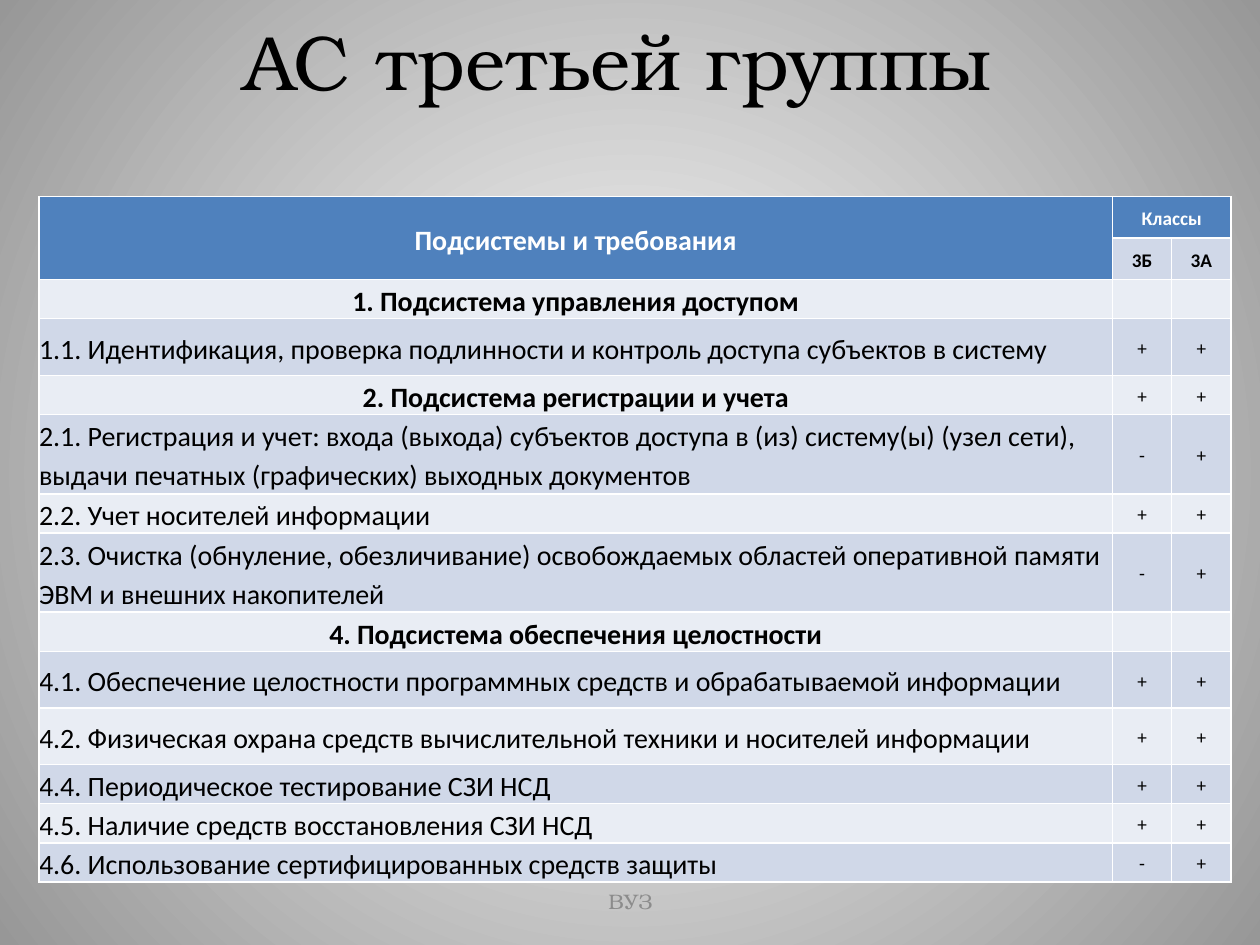
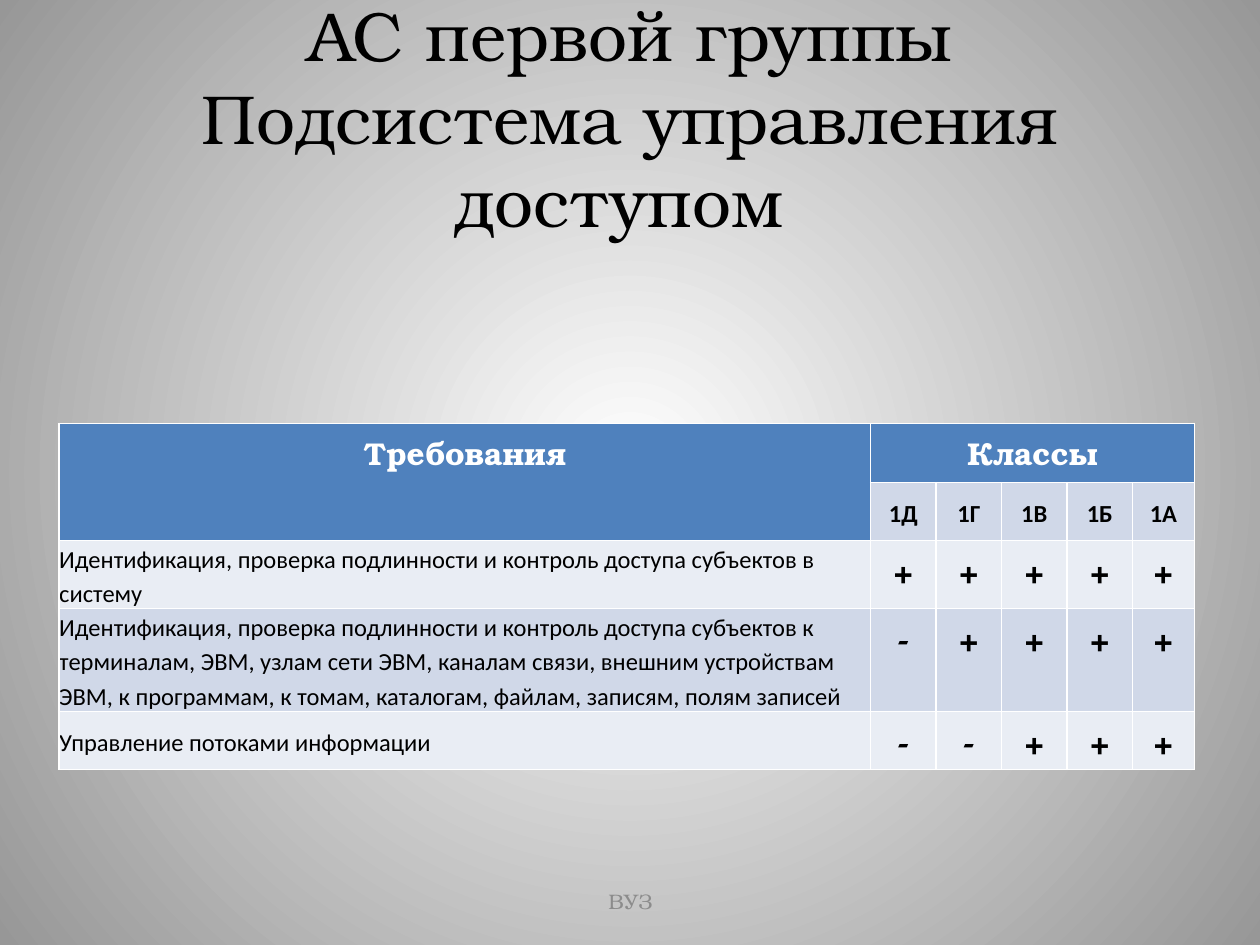
from dataclasses import dataclass, replace

from lxml import etree
from pptx import Presentation
from pptx import util as u
from pptx.dml import color
from pptx.enum import text
from pptx.oxml import ns

CENTER, LEFT = text.PP_ALIGN.CENTER, text.PP_ALIGN.LEFT
MIDDLE, TOP = text.MSO_ANCHOR.MIDDLE, text.MSO_ANCHOR.TOP
FOOTER = "ВУЗ"


@dataclass(frozen=True)
class Theme:
    serif: str = "TeX Gyre Bonum"
    sans: str = "Calibri"
    ink: str = "000000"
    white: str = "FFFFFF"
    edge: str = "979797"
    muted: str = "8C8C8C"
    header: str = "4F81BD"
    dark_band: str = "D0D8E8"
    light_band: str = "E9EDF4"
    footer_size: float = 12
    border: float = 1


THEME = Theme()


@dataclass(frozen=True)
class CellStyle:
    """Type and placement of the text in a table cell."""
    size: float
    font: str = THEME.sans
    color: str = THEME.ink
    bold: bool = False
    align: int = CENTER
    tight: bool = True  # no margins, centred vertically, 1.15 lines


class Deck:
    def __init__(self, theme):
        self.theme = theme
        self.presentation = Presentation()
        self.presentation.slide_width = u.Inches(10)
        self.presentation.slide_height = u.Inches(7.5)
        self.slide = None
        self.paint_background()

    def paint_background(self):
        """Put a round gradient behind every slide."""
        master = self.presentation.slide_master
        fill = master.background.fill
        fill.gradient()
        stops = zip(fill.gradient_stops, (self.theme.white, self.theme.edge), (0, 1))
        for stop, shade, position in stops:
            stop.color.rgb = color.RGBColor.from_string(shade)
            stop.position = position
        linear = next(master.element.iter(ns.qn("a:lin")))
        circle = etree.Element(ns.qn("a:path"), path="circle")
        etree.SubElement(circle, ns.qn("a:fillToRect"),
                         dict.fromkeys("ltrb", "50000"))
        linear.getparent().replace(linear, circle)

    def format_text(self, frame, font, size, shade, bold=False, align=CENTER):
        for paragraph in frame.paragraphs:
            paragraph.alignment = align
            for run in paragraph.runs:
                run.font.name = font
                run.font.size = u.Pt(size)
                run.font.bold = bold
                run.font.color.rgb = color.RGBColor.from_string(shade)

    def add_slide(self, title, top, height, size):
        layout = self.presentation.slide_layouts[5]
        self.slide = self.presentation.slides.add_slide(layout)
        shape = self.slide.shapes.title
        shape.left, shape.top = u.Inches(0.5), u.Inches(top)
        shape.width, shape.height = u.Inches(9), u.Inches(height)
        frame = shape.text_frame
        frame.text = title
        frame.auto_size = text.MSO_AUTO_SIZE.NONE
        frame.vertical_anchor = MIDDLE
        self.format_text(frame, self.theme.serif, size, self.theme.ink)
        self.add_footer()

    def add_footer(self):
        box = self.slide.shapes.add_textbox(
            u.Inches(3.42), u.Inches(6.95), u.Inches(3.17), u.Inches(0.4))
        frame = box.text_frame
        frame.word_wrap = True
        frame.text = FOOTER
        frame.vertical_anchor = MIDDLE
        self.format_text(frame, self.theme.serif, self.theme.footer_size,
                         self.theme.muted)

    def add_table(self, left, top, widths, heights):
        """Add an empty banded table whose header spans two rows."""
        shape = self.slide.shapes.add_table(
            len(heights), len(widths), u.Inches(left), u.Inches(top),
            u.Inches(sum(widths)), u.Inches(sum(heights)))
        table = shape.table
        table.first_row = table.horz_banding = False
        for column, width in zip(table.columns, widths):
            column.width = u.Inches(width)
        for row, height in zip(table.rows, heights):
            row.height = u.Inches(height)
        table.cell(0, 0).merge(table.cell(1, 0))
        table.cell(0, 1).merge(table.cell(0, len(widths) - 1))

        bands = (self.theme.light_band, self.theme.dark_band)
        for index, row in enumerate(table.rows):
            for cell in row.cells:
                cell.margin_left = cell.margin_right = 0
                cell.margin_top = cell.margin_bottom = 0
                self.add_borders(cell)
                cell.fill.solid()
                shade = self.theme.header if index == 0 else bands[index % 2]
                cell.fill.fore_color.rgb = color.RGBColor.from_string(shade)
        return table

    def add_borders(self, cell):
        properties = cell._tc.get_or_add_tcPr()
        for side in ("lnL", "lnR", "lnT", "lnB"):
            line = etree.SubElement(properties, ns.qn(f"a:{side}"),
                                    w=str(u.Pt(self.theme.border)))
            fill = etree.SubElement(line, ns.qn("a:solidFill"))
            etree.SubElement(fill, ns.qn("a:srgbClr"), val=self.theme.white)

    def write_cell(self, cell, words, style):
        cell.text_frame.text = words
        cell.vertical_anchor = MIDDLE if style.tight else TOP
        if style.tight:
            cell.text_frame.paragraphs[0].line_spacing = 1.15
        else:
            cell.margin_left = cell.margin_right = u.Inches(0.1)
            cell.margin_top = cell.margin_bottom = u.Inches(0.05)
        self.format_text(cell.text_frame, style.font, style.size, style.color,
                         style.bold, style.align)

    def write_header(self, table, heading, heading_style, group_style,
                     classes, class_style):
        self.write_cell(table.cell(0, 0), heading, heading_style)
        self.write_cell(table.cell(0, 1), "Классы", group_style)
        for column, name in enumerate(classes, 1):
            self.write_cell(table.cell(1, column), name, class_style)

    def write_requirement(self, table, row, words, marks, style, mark_style):
        self.write_cell(table.cell(row, 0), words, style)
        for column, mark in enumerate(marks, 1):
            self.write_cell(table.cell(row, column), mark, mark_style)


# Requirement, marks per class, row height
THIRD_GROUP = [
    ("1. Подсистема управления доступом", "", 0.31),
    ("1.1. Идентификация, проверка подлинности и контроль доступа субъектов "
     "в систему", "++", 0.45),
    ("2. Подсистема регистрации и учета", "++", 0.31),
    ("2.1. Регистрация и учет: входа (выхода) субъектов доступа в (из) "
     "систему(ы) (узел сети), выдачи печатных (графических) выходных "
     "документов", "-+", 0.63),
    ("2.2. Учет носителей информации", "++", 0.31),
    ("2.3. Очистка (обнуление, обезличивание) освобождаемых областей "
     "оперативной памяти ЭВМ и внешних накопителей", "-+", 0.63),
    ("4. Подсистема обеспечения целостности", "", 0.31),
    ("4.1. Обеспечение целостности программных средств и обрабатываемой "
     "информации", "++", 0.45),
    ("4.2. Физическая охрана средств вычислительной техники и носителей "
     "информации", "++", 0.45),
    ("4.4. Периодическое тестирование СЗИ НСД", "++", 0.31),
    ("4.5. Наличие средств восстановления СЗИ НСД", "++", 0.31),
    ("4.6. Использование сертифицированных средств защиты", "-+", 0.31),
]

FIRST_GROUP = [
    ("Идентификация, проверка подлинности и контроль доступа субъектов "
     "в систему", "+++++", 0.54),
    ("Идентификация, проверка подлинности и контроль доступа субъектов "
     "к терминалам, ЭВМ, узлам сети ЭВМ, каналам связи, внешним устройствам "
     "ЭВМ, к программам, к томам, каталогам, файлам, записям, полям записей",
     "-++++", 0.82),
    ("Управление потоками информации", "--+++", 0.46),
]


def build_third_group(deck):
    deck.add_slide("АС третьей группы ", top=0, height=0.94, size=44)
    heights = [0.33, 0.33] + [height for *_, height in THIRD_GROUP]
    table = deck.add_table(0.31, 1.56, [8.52, 0.47, 0.47], heights)

    section = CellStyle(16, bold=True)
    requirement = CellStyle(16, align=LEFT)
    mark = CellStyle(11)
    class_name = replace(mark, bold=True)
    deck.write_header(table, "Подсистемы и требования",
                      replace(section, color=THEME.white),
                      replace(class_name, color=THEME.white),
                      ("3Б", "3А"), class_name)
    for row, (words, marks, _) in enumerate(THIRD_GROUP, 2):
        is_section = words.split()[0].count(".") == 1
        style = section if is_section else requirement
        deck.write_requirement(table, row, words, marks, style, mark)


def build_first_group(deck):
    deck.add_slide("АС первой группы\vПодсистема управления доступом ",
                   top=0.3, height=1.25, size=39.6)
    heights = [0.47, 0.46] + [height for *_, height in FIRST_GROUP]
    table = deck.add_table(0.47, 3.36, [6.44] + [0.52] * 4 + [0.49], heights)

    requirement = CellStyle(14, align=LEFT)
    mark = CellStyle(18, font=THEME.serif, bold=True, tight=False)
    heading = replace(mark, color=THEME.white)
    deck.write_header(table, "Требования", heading, heading,
                      ("1Д", "1Г", "1В", "1Б", "1А"), CellStyle(14, bold=True))
    for row, (words, marks, _) in enumerate(FIRST_GROUP, 2):
        deck.write_requirement(table, row, words, marks, requirement, mark)


def main():
    deck = Deck(THEME)
    build_third_group(deck)
    build_first_group(deck)
    deck.presentation.save("out.pptx")


if __name__ == "__main__":
    main()
